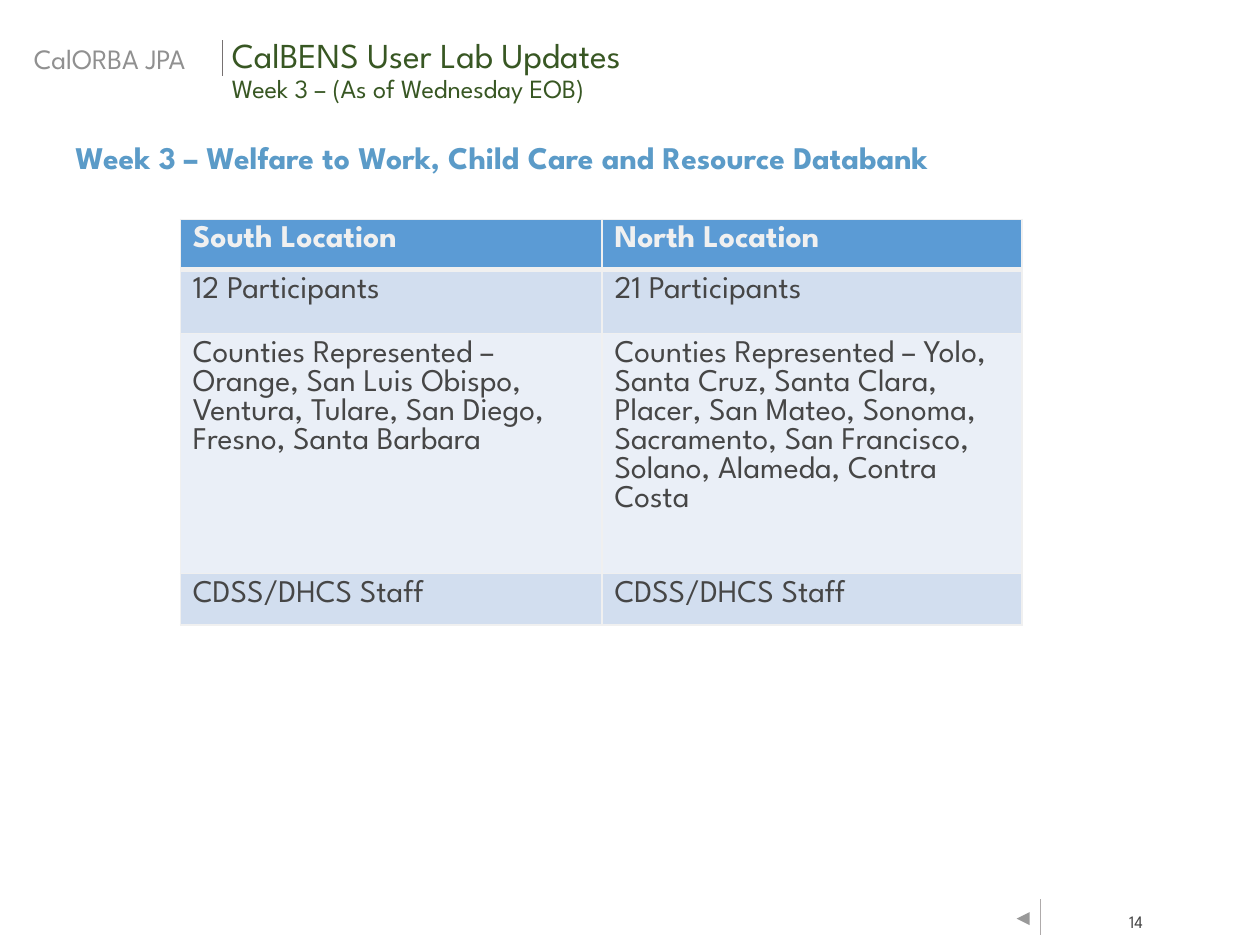
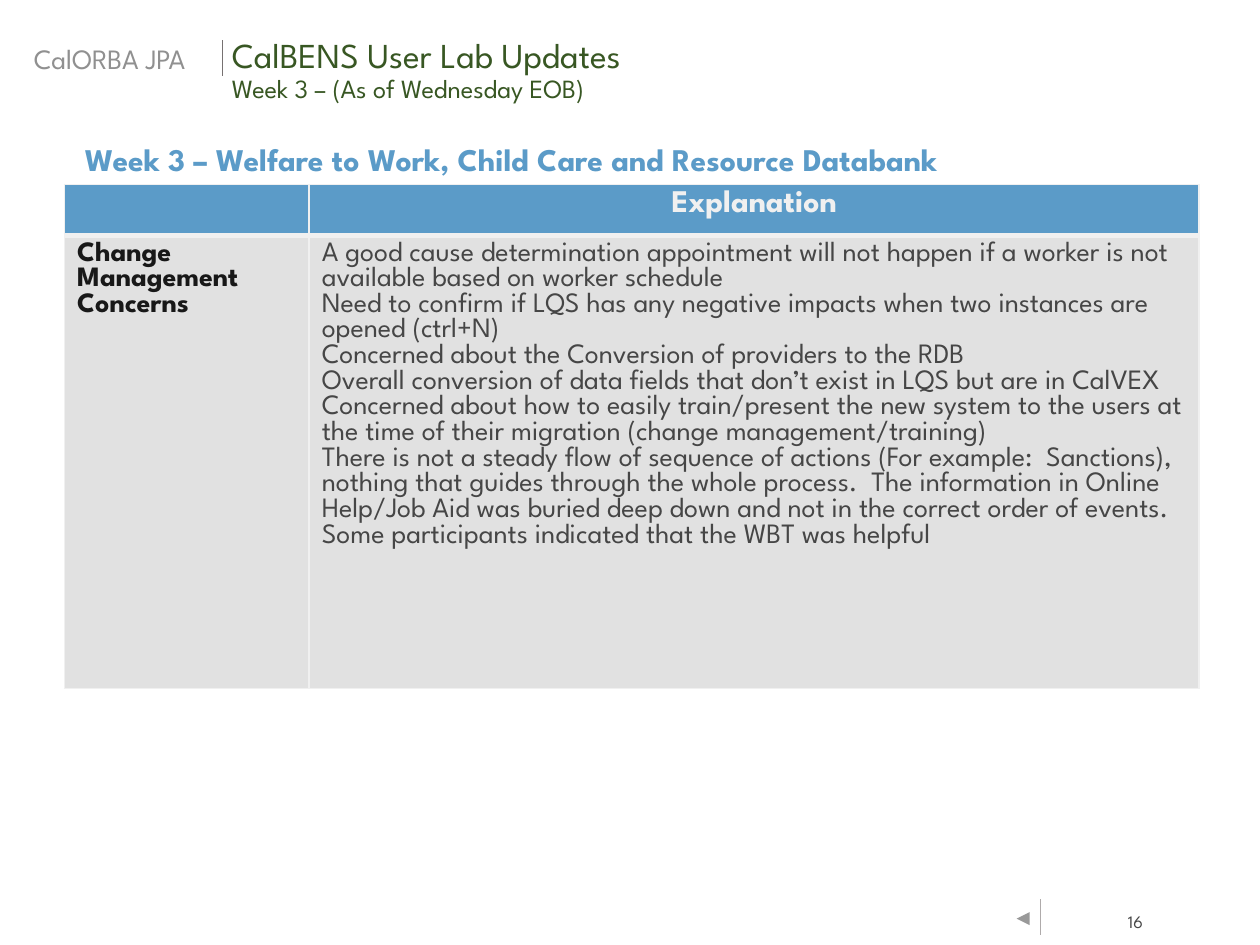
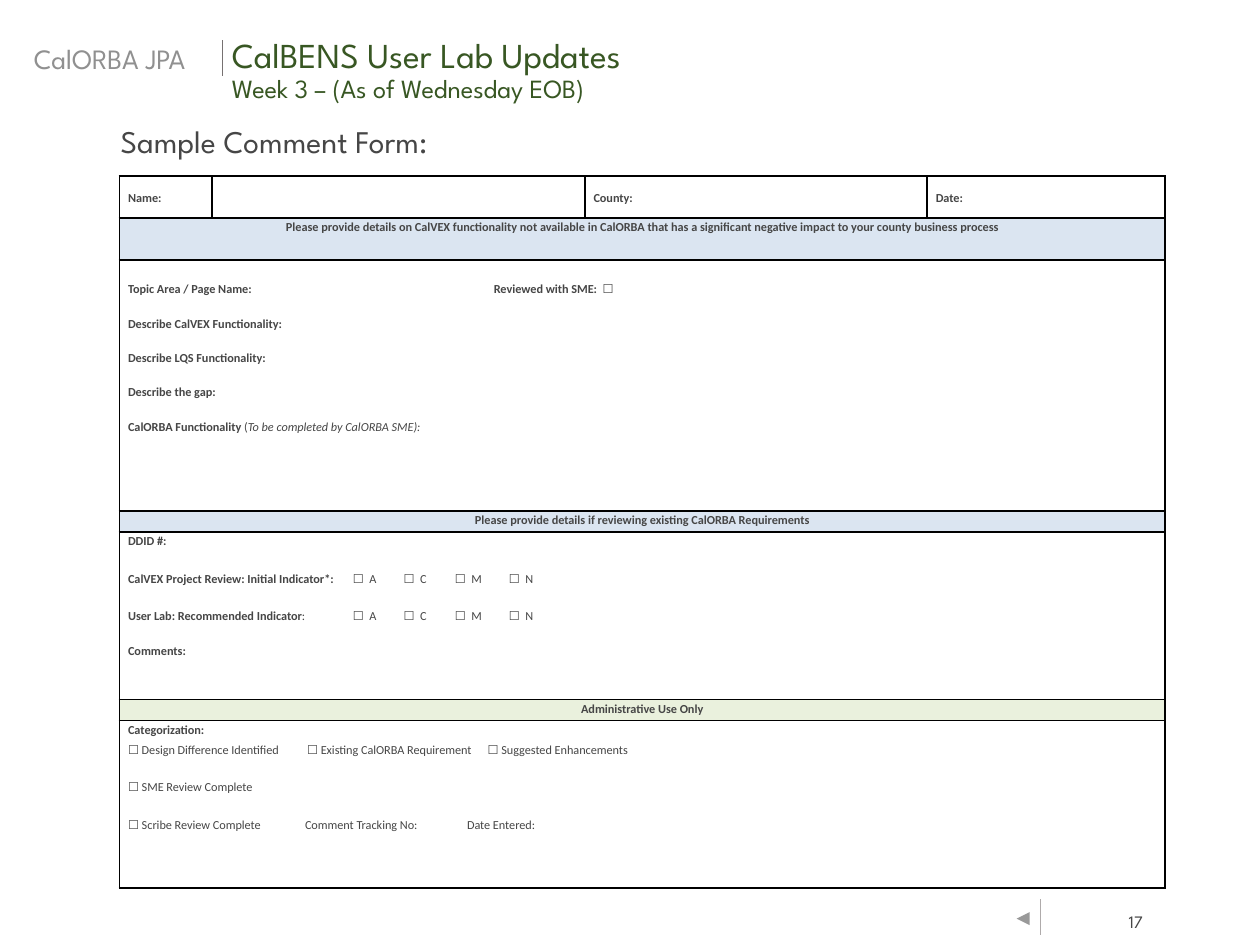
"""Build three user lab update slides: participants, concerns and a comment form."""
import itertools
from dataclasses import dataclass
from typing import Optional

import lxml.etree
import pptx
import pptx.dml.color
import pptx.enum.shapes
import pptx.enum.text
import pptx.oxml.ns
import pptx.slide
import pptx.table
import pptx.text.text
import pptx.util

Pt = pptx.util.Pt
ALIGN = pptx.enum.text.PP_ALIGN
ANCHOR = pptx.enum.text.MSO_ANCHOR
SHAPE = pptx.enum.shapes.MSO_SHAPE

COLORS = {
    "text": "464646",
    "strong": "181818",
    "title": "385723",
    "brand": "909090",
    "heading": "5B9BC8",
    "pale": "F0F0F0",
    "header": "5B9BD5",
    "band_dark": "D2DEEF",
    "band_light": "EAEFF7",
    "grey": "E1E1E1",
    "white": "FFFFFF",
    "black": "000000",
    "form_blue": "DBE5F1",
    "form_green": "EAF1DD",
    "title_rule": "767171",
    "footer_rule": "AFABAB",
}
FONT = "League Spartan"
FORM_FONT = "Calibri"
BOX_FONT = "Noto Sans CJK JP"
BOX_MARK = "☐"
FORM_LINE = 9.8
HEADING = "Week 3 – Welfare to Work, Child Care and Resource Databank"


@dataclass(frozen=True)
class Box:
    left: float
    top: float
    width: float
    height: float


@dataclass(frozen=True)
class Run:
    text: str
    size: float = 18
    color: str = "text"
    font: str = FONT
    bold: bool = False
    italic: bool = False
    new_line: bool = False


@dataclass(frozen=True)
class Para:
    runs: tuple[Run, ...]
    align: ALIGN = ALIGN.LEFT
    spacing: float = 1.0
    before: float = 0
    tabs: tuple[float, ...] = ()


@dataclass(frozen=True)
class Cell:
    paras: tuple[Para, ...] = ()
    fill: Optional[str] = None
    anchor: ANCHOR = ANCHOR.TOP
    top: Optional[float] = None


@dataclass(frozen=True)
class Grid:
    box: Box
    cols: tuple[float, ...]
    rows: tuple[float, ...]
    cells: tuple[tuple[Cell, ...], ...]
    border: str
    header_line: float = 1
    margins: tuple[float, float] = (7.2, 3.6)


def rgb(name: str) -> pptx.dml.color.RGBColor:
    """Return a named colour."""
    return pptx.dml.color.RGBColor.from_string(COLORS[name])


def place(box: Box) -> tuple[int, ...]:
    """Return the box as slide lengths."""
    return tuple(Pt(v) for v in (box.left, box.top, box.width, box.height))


def sub(parent, tag: str, **attrs: str):
    """Append a child element in its schema namespace."""
    return lxml.etree.SubElement(parent, pptx.oxml.ns.qn(tag), attrs)


def write_run(p, run: Run) -> None:
    """Add a run, giving check boxes their own font."""
    if run.new_line:
        p.add_line_break()
    for is_box, chars in itertools.groupby(run.text, lambda c: c == BOX_MARK):
        r = p.add_run()
        r.text = "".join(chars)
        fmt = {"size": Pt(run.size), "bold": run.bold, "italic": run.italic,
               "name": BOX_FONT if is_box else run.font}
        for key, value in fmt.items():
            setattr(r.font, key, value)
        r.font.color.rgb = rgb(run.color)
        if is_box:
            sub(r.font._element, "a:ea", typeface=BOX_FONT)


def write(tf, paras: tuple[Para, ...]) -> None:
    """Fill a text frame with paragraphs."""
    for i, para in enumerate(paras):
        p = tf.add_paragraph() if i else tf.paragraphs[0]
        fmt = {"alignment": para.align, "line_spacing": para.spacing,
               "space_before": Pt(para.before)}
        for key, value in fmt.items():
            setattr(p, key, value)
        if para.tabs:
            tabs = sub(p._p.get_or_add_pPr(), "a:tabLst")
            for stop in para.tabs:
                sub(tabs, "a:tab", pos=str(Pt(stop)), algn="l")
        for run in para.runs:
            write_run(p, run)


def add_text(s: pptx.slide.Slide, box: Box, para: Para,
             margins: tuple[float, float] = (7.2, 3.6),
             anchor: ANCHOR = ANCHOR.TOP, wrap: bool = True) -> None:
    """Add a text box with one paragraph."""
    tf = s.shapes.add_textbox(*place(box)).text_frame
    side, end = (Pt(m) for m in margins)
    fmt = {"word_wrap": wrap, "vertical_anchor": anchor, "margin_left": side,
           "margin_right": side, "margin_top": end, "margin_bottom": end}
    for key, value in fmt.items():
        setattr(tf, key, value)
    write(tf, (para,))


def add_rule(s: pptx.slide.Slide, x: float, top: float, bottom: float, color: str) -> None:
    """Add a thin vertical rule."""
    sp = s.shapes.add_connector(pptx.enum.shapes.MSO_CONNECTOR.STRAIGHT,
                                Pt(x), Pt(top), Pt(x), Pt(bottom))
    sp.line.color.rgb = rgb(color)
    sp.line.width = Pt(0.5)
    sub(sp._element.spPr, "a:effectLst")


def set_borders(cell, color: str, bottom: float) -> None:
    """Draw the four borders of a cell."""
    tc_pr = cell._tc.get_or_add_tcPr()
    widths = {"a:lnL": 1, "a:lnR": 1, "a:lnT": 1, "a:lnB": bottom}
    for i, (tag, width) in enumerate(widths.items()):
        ln = sub(tc_pr, tag, w=str(Pt(width)))
        sub(sub(ln, "a:solidFill"), "a:srgbClr", val=COLORS[color])
        tc_pr.insert(i, ln)


def fill_cell(cell, content: Cell, margins: tuple[float, float]) -> None:
    """Format a cell and write its text."""
    side, end = margins
    top = end if content.top is None else content.top
    fmt = {"margin_left": Pt(side), "margin_right": Pt(side), "margin_top": Pt(top),
           "margin_bottom": Pt(end), "vertical_anchor": content.anchor}
    for key, value in fmt.items():
        setattr(cell, key, value)
    if content.fill:
        cell.fill.solid()
        cell.fill.fore_color.rgb = rgb(content.fill)
    else:
        cell.fill.background()
    write(cell.text_frame, content.paras)


def add_grid(s: pptx.slide.Slide, grid: Grid) -> None:
    """Add a table; a row with a single cell spans all columns."""
    table = s.shapes.add_table(len(grid.rows), len(grid.cols), *place(grid.box)).table
    for col, width in zip(table.columns, grid.cols):
        col.width = Pt(width)
    for i, (height, cells) in enumerate(zip(grid.rows, grid.cells)):
        table.rows[i].height = Pt(height)
        if len(cells) == 1:
            table.cell(i, 0).merge(table.cell(i, len(grid.cols) - 1))
        for j in range(len(grid.cols)):
            cell = table.cell(i, j)
            fill_cell(cell, cells[j] if j < len(cells) else Cell(), grid.margins)
            set_borders(cell, grid.border, 1 if i else grid.header_line)


def add_frame(prs, number: int) -> pptx.slide.Slide:
    """Add a slide with the shared title and footer."""
    s = prs.slides.add_slide(prs.slide_layouts[6])
    page = Para((Run(str(number), 10),), ALIGN.RIGHT)
    add_text(s, Box(635.8, 517.7, 23, 17.3), page, (5.76, 2.88), wrap=False)
    sp = s.shapes.add_shape(SHAPE.ACTION_BUTTON_FORWARD_OR_NEXT,
                            *place(Box(579.6, 518.4, 10, 13)))
    sp.rotation = 180
    sp.shadow.inherit = False
    sp.fill.solid()
    sp.fill.fore_color.rgb = rgb("white")
    sp.line.fill.background()
    add_rule(s, 594.7, 514, 534.2, "footer_rule")
    add_text(s, Box(19.4, 20.2, 168.5, 26.6), Para((Run("CalORBA JPA", 16, "brand"),)),
             (0, 3.6), ANCHOR.MIDDLE)
    add_rule(s, 127.4, 23, 43.2, "title_rule")
    title = (Run("CalBENS User Lab Updates", 20, "title"),
             Run("Week 3 – (As of Wednesday EOB)", 15, "title", new_line=True))
    add_text(s, Box(132.5, 21.6, 524, 26.6), Para(title, spacing=0.9), (0, 0))
    return s


def add_heading(s: pptx.slide.Slide, left: float, top: float) -> None:
    """Add the week's topic."""
    add_text(s, Box(left, top, 640, 28.8), Para((Run(HEADING, 18, "heading", bold=True),)))


def simple(text: str, fill: str, size: float = 18, color: str = "text",
           bold: bool = False, align: ALIGN = ALIGN.LEFT) -> Cell:
    """Return a filled cell with one paragraph per line of text."""
    return Cell(tuple(Para((Run(line, size, color, bold=bold),), align)
                      for line in text.splitlines()), fill)


def participants(prs) -> None:
    """Add the participants slide."""
    s = add_frame(prs, 14)
    add_heading(s, 36, 75.6)
    rows = (
        ("South Location", "North Location"),
        ("12 Participants", "21 Participants"),
        ("Counties Represented – Orange, San Luis Obispo, Ventura, Tulare, San Diego, "
         "Fresno, Santa Barbara",
         "Counties Represented – Yolo, Santa Cruz, Santa Clara, Placer, San Mateo, Sonoma, "
         "Sacramento, San Francisco, Solano, Alameda, Contra Costa"),
        ("CDSS/DHCS Staff", "CDSS/DHCS Staff"),
    )
    header = tuple(simple(t, "header", color="pale", bold=True) for t in rows[0])
    body = tuple(tuple(simple(t, fill) for t in row) for row, fill in
                 zip(rows[1:], itertools.cycle(("band_dark", "band_light"))))
    add_grid(s, Grid(Box(103, 125.3, 481, 231.8), (241, 240), (28.8, 36.6, 137.1, 29.3),
                     (header, *body), "pale", 3))


def concerns(prs) -> None:
    """Add the change management concerns slide."""
    s = add_frame(prs, 16)
    explanation = """A good cause determination appointment will not happen if a worker is not available based on worker schedule
Need to confirm if LQS has any negative impacts when two instances are opened (ctrl+N)
Concerned about the Conversion of providers to the RDB
Overall conversion of data fields that don’t exist in LQS but are in CalVEX
Concerned about how to easily train/present the new system to the users at the time of their migration (change management/training)
There is not a steady flow of sequence of actions (For example:  Sanctions), nothing that guides through the whole process.  The information in Online Help/Job Aid was buried deep down and not in the correct order of events.  Some participants indicated that the WBT was helpful"""
    cells = (
        (Cell(fill="heading"),
         simple("Explanation", "heading", color="pale", bold=True, align=ALIGN.CENTER)),
        (simple("Change Management Concerns", "grey", 16, "strong", True),
         simple(explanation, "grey", 16)),
    )
    add_grid(s, Grid(Box(36.9, 105.4, 648.4, 288), (139.8, 508.6), (29, 259),
                     cells, "pale", 3))
    add_heading(s, 41.4, 76.3)


def form_para(bold: str = "", plain: str = "", italic: str = "", before: float = FORM_LINE,
              tabs: tuple[float, ...] = (), align: ALIGN = ALIGN.LEFT) -> Para:
    """Return a form line made of bold, plain and italic parts."""
    parts = ((bold, True, False), (plain, False, False), (italic, False, True))
    runs = tuple(Run(t, 7, font=FORM_FONT, bold=b, italic=i) for t, b, i in parts if t)
    return Para(runs, align, 1.15, before, tabs)


def band(text: str, fill: str) -> tuple[Cell, ...]:
    """Return a form row with a centred section title."""
    return (Cell((form_para(text, before=0, align=ALIGN.CENTER),), fill),)


def comment_form(prs) -> None:
    """Add the sample comment form slide."""
    s = add_frame(prs, 17)
    marks = "\t" + "\t".join(f"{BOX_MARK}  {letter}" for letter in "ACMN")
    mark_tabs = (128.5, 157.5, 186.8, 217.6)
    fields = tuple(Cell((form_para(t, before=0),) if t else (), anchor=ANCHOR.MIDDLE)
                   for t in ("Name:", "", "County:", "Date:"))
    gap = Cell((
        form_para("Topic Area / Page Name:\tReviewed with SME:  ☐", before=0, tabs=(209,)),
        form_para("Describe CalVEX Functionality:"),
        form_para("Describe LQS Functionality:"),
        form_para("Describe the gap:"),
        form_para("CalORBA Functionality ", "(", "To be completed by CalORBA SME):"),
    ), top=FORM_LINE)
    review = Cell((
        form_para("DDID #:", before=0),
        form_para("CalVEX Project Review: Initial Indicator*:", marks, tabs=mark_tabs),
        form_para("User Lab: Recommended Indicator", ":" + marks, tabs=mark_tabs),
        form_para("Comments:"),
    ))
    admin = Cell((
        form_para("Categorization:", before=0),
        form_para(plain="☐ Design Difference Identified\t☐ Existing CalORBA Requirement"
                        "\t☐ Suggested Enhancements", before=0, tabs=(102.3, 205.5)),
        form_para(plain="☐ SME Review Complete"),
        form_para(plain="☐ Scribe Review Complete\tComment Tracking No:\tDate Entered:",
                  tabs=(101.1, 193.7)),
    ))
    cells = (
        fields,
        band("Please provide details on CalVEX functionality not available in CalORBA that has "
             "a significant negative impact to your county business process", "form_blue"),
        (gap,),
        band("Please provide details if reviewing existing CalORBA Requirements", "form_blue"),
        (review,),
        band("Administrative Use Only", "form_green"),
        (admin,),
    )
    add_grid(s, Grid(Box(68.2, 100.6, 597.6, 407), (53, 213, 195.6, 136),
                     (24, 24, 143.5, 12, 95.7, 12, 95.8), cells, "black", margins=(5, 0)))
    add_text(s, Box(61.9, 66.2, 571.7, 28.8), Para((Run("Sample Comment Form:"),)))


def main() -> None:
    """Build and save the presentation."""
    prs = pptx.Presentation()
    prs.slide_width, prs.slide_height = Pt(720), Pt(540)
    for build in (participants, concerns, comment_form):
        build(prs)
    prs.save("out.pptx")


if __name__ == "__main__":
    main()
